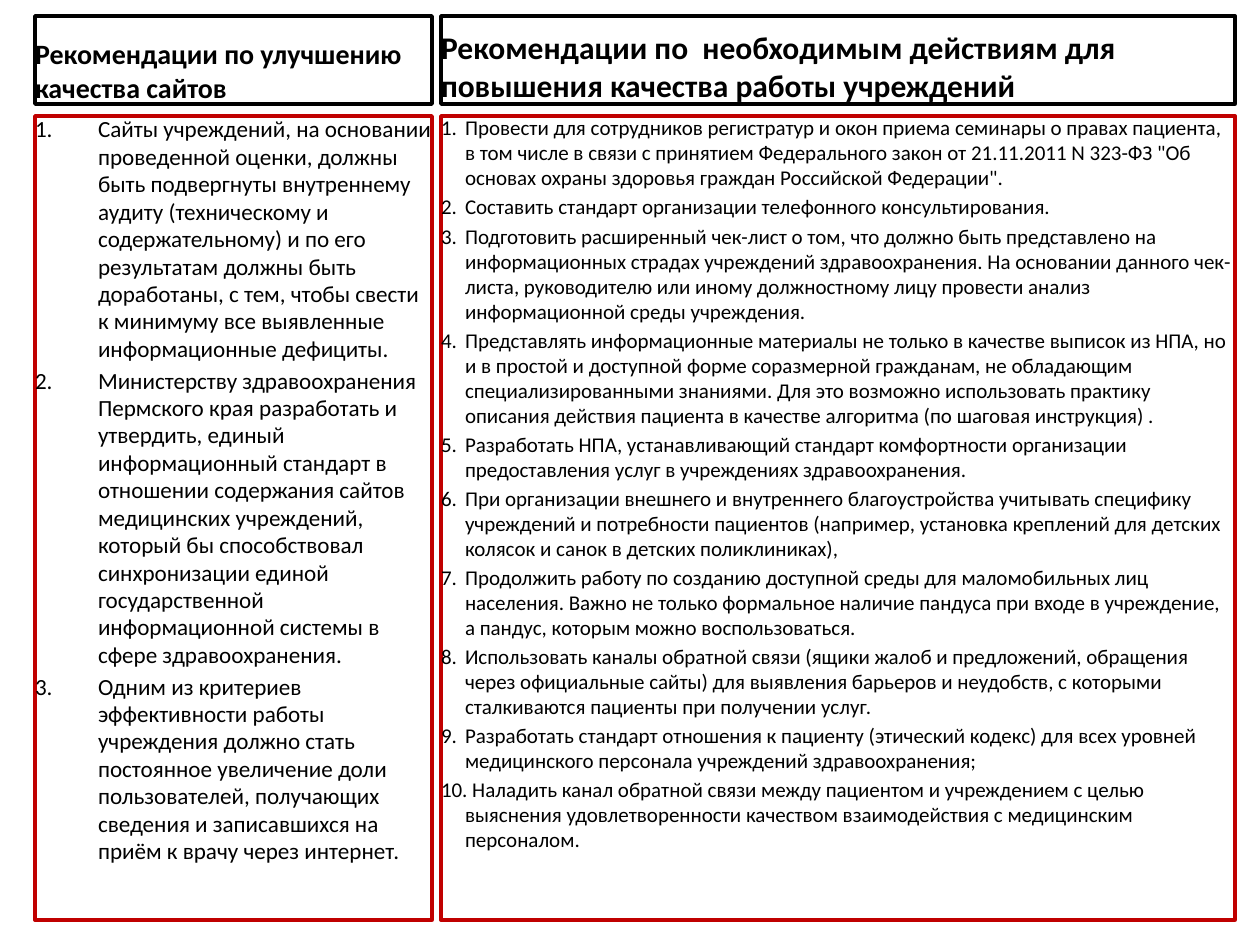
from lxml import etree
from pptx import Presentation
from pptx import util as u
from pptx.dml.color import RGBColor
from pptx.enum import text
from pptx.oxml.ns import qn

PX = 914400 / 126
FONT = "Calibri"
COLORS = {"text": "000000", "fill": "FFFFFF", "head": "000000", "body": "C00000"}
HEAD_TOP, HEAD_H = 16, 88
BODY_TOP, BODY_H = 116, 804

SITES = [
    "Сайты учреждений, на основании проведенной оценки, должны быть подвергнуты внутреннему аудиту (техническому и содержательному) и по его результатам должны быть доработаны, с тем, чтобы свести к минимуму все выявленные информационные дефициты.",
    "Министерству здравоохранения Пермского края разработать и утвердить, единый информационный стандарт в отношении содержания сайтов медицинских учреждений, который бы способствовал синхронизации единой государственной информационной системы в сфере здравоохранения.",
    "Одним из критериев эффективности работы учреждения должно стать постоянное увеличение доли пользователей, получающих сведения и записавшихся на приём к врачу через интернет.",
]
ACTIONS = [
    "Провести для сотрудников регистратур и окон приема семинары о правах пациента, в том числе в связи с принятием Федерального закон от 21.11.2011 N 323-ФЗ \"Об основах охраны здоровья граждан Российской Федерации\".",
    "Составить стандарт организации телефонного консультирования.",
    "Подготовить расширенный чек-лист о том, что должно быть представлено на информационных страдах учреждений здравоохранения. На основании данного чек-листа, руководителю или иному должностному лицу провести анализ информационной среды учреждения.",
    "Представлять информационные материалы не только в качестве выписок из НПА, но и в простой и доступной форме соразмерной гражданам, не обладающим специализированными знаниями. Для это возможно использовать практику описания действия пациента в качестве алгоритма (по шаговая инструкция) .",
    "Разработать НПА, устанавливающий стандарт комфортности организации предоставления услуг в учреждениях здравоохранения.",
    "При организации внешнего и внутреннего благоустройства учитывать специфику учреждений и потребности пациентов (например, установка креплений для детских колясок и санок в детских поликлиниках),",
    "Продолжить работу по созданию доступной среды для маломобильных лиц населения. Важно не только формальное наличие пандуса при входе в учреждение, а пандус, которым можно воспользоваться.",
    "Использовать каналы обратной связи (ящики жалоб и предложений, обращения через официальные сайты) для выявления барьеров и неудобств, с которыми сталкиваются пациенты при получении услуг.",
    "Разработать стандарт отношения к пациенту (этический кодекс) для всех уровней  медицинского персонала учреждений здравоохранения;",
    " Наладить канал обратной связи между пациентом и учреждением с целью выяснения удовлетворенности качеством взаимодействия с медицинским персоналом.",
]
# left, width, heading, heading size, items, item size, hanging indent
COLUMNS = [
    (35, 397, "Рекомендации по улучшению качества сайтов", 16, SITES, 13.2, 63),
    (441, 794, "Рекомендации по  необходимым действиям для повышения качества работы учреждений",
     18, ACTIONS, 12, 24),
]


def px(n):
    return u.Emu(round(n * PX))


def rgb(name):
    return RGBColor.from_string(COLORS[name])


def set_marker(p, indent):
    """Number the paragraph with a hanging indent, or clear its bullet if indent is 0."""
    pPr = p._p.get_or_add_pPr()
    pPr.set("marL", str(px(indent)))
    pPr.set("indent", str(px(-indent)))
    if indent:
        etree.SubElement(pPr, qn("a:buFont"), typeface="+mj-lt")
        etree.SubElement(pPr, qn("a:buAutoNum"), type="arabicPeriod")
    else:
        etree.SubElement(pPr, qn("a:buNone"))


def write(tf, paragraphs, size, bold=False, indent=0, spacing=1.0):
    for i, content in enumerate(paragraphs):
        p = tf.paragraphs[0] if i == 0 else tf.add_paragraph()
        set_marker(p, indent)
        p.alignment = text.PP_ALIGN.LEFT
        p.line_spacing = spacing
        p.space_before = u.Pt(2.4 if i else 0)
        r = p.add_run()
        r.text = content
        r.font.name, r.font.size, r.font.bold = FONT, u.Pt(size), bold
        r.font.color.rgb = rgb("text")


def frame(sp, left, top, width, height, line, anchor):
    """Place and outline a placeholder; return its text frame without insets."""
    sp.left, sp.top, sp.width, sp.height = map(px, (left, top, width, height))
    sp.fill.solid()
    sp.fill.fore_color.rgb = rgb("fill")
    sp.line.color.rgb = rgb(line)
    sp.line.width = u.Pt(2)
    tf = sp.text_frame
    tf.word_wrap = True
    tf.auto_size = text.MSO_AUTO_SIZE.NONE
    tf.vertical_anchor = anchor
    tf.margin_left = tf.margin_top = tf.margin_right = tf.margin_bottom = 0
    return tf


def main():
    prs = Presentation()
    prs.slide_width, prs.slide_height = u.Inches(10), u.Inches(7.5)
    s = prs.slides.add_slide(prs.slide_layouts.get_by_name("Comparison"))
    title, *boxes = s.placeholders
    title.element.getparent().remove(title.element)
    for sp in boxes[4:]:
        sp.element.getparent().remove(sp.element)

    pairs = zip(boxes[0:4:2], boxes[1:4:2])
    for (head, body), column in zip(pairs, COLUMNS):
        left, width, heading, head_size, items, size, indent = column
        tf = frame(head, left, HEAD_TOP, width, HEAD_H, "head", text.MSO_ANCHOR.BOTTOM)
        write(tf, [heading], head_size, bold=True)
        tf = frame(body, left, BODY_TOP, width, BODY_H, "body", text.MSO_ANCHOR.TOP)
        write(tf, items, size, indent=indent, spacing=0.99)
    prs.save("out.pptx")


if __name__ == "__main__":
    main()
